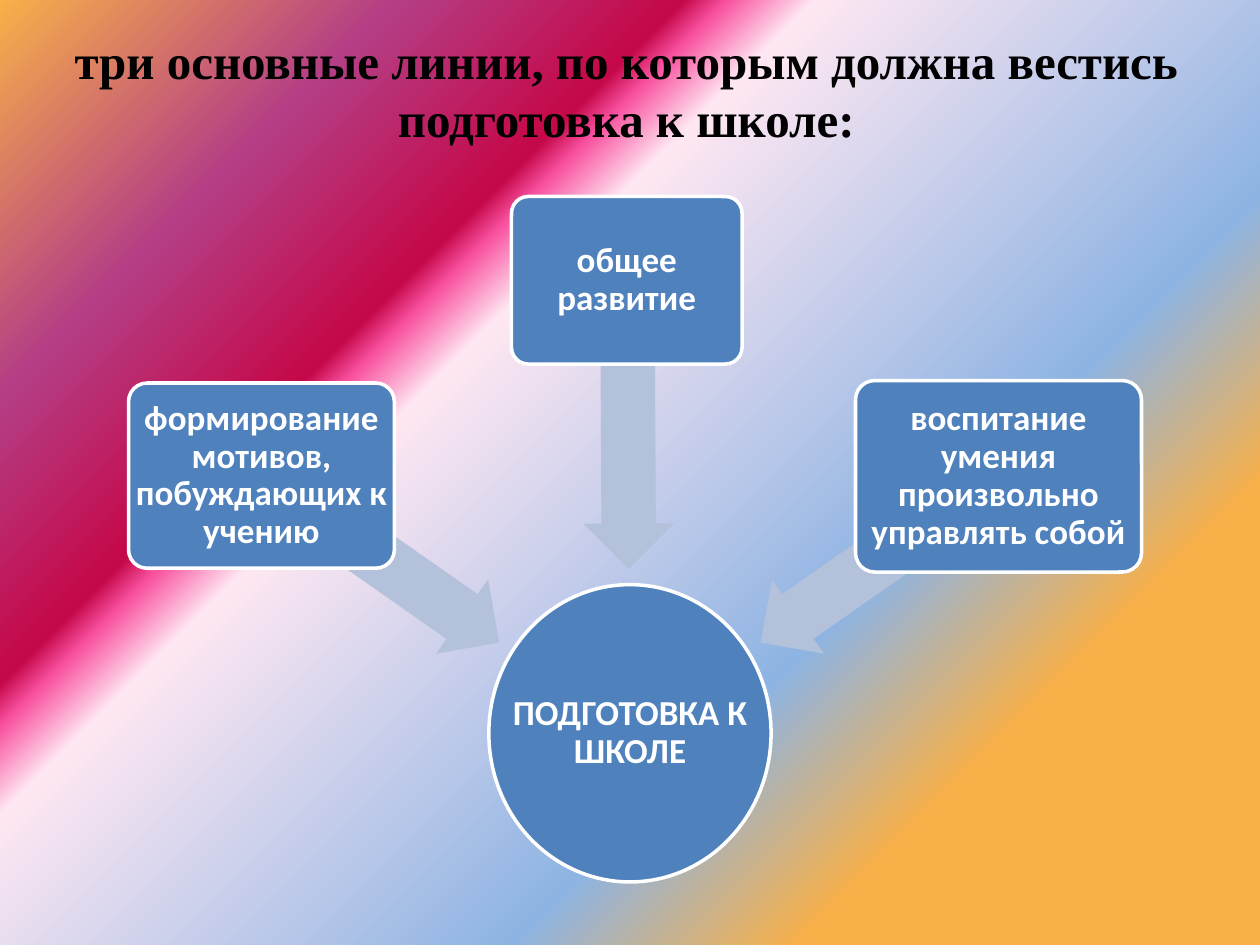
from pptx import Presentation
from pptx import util as u
from pptx.dml.color import RGBColor
from pptx.enum import shapes, text
from pptx.oxml import parse_xml
from pptx.oxml.ns import nsdecls

BLUE, PALE, WHITE, BLACK = "4F81BD", "B3C1DB", "FFFFFF", "000000"
STOPS = [(13, "F8B049"), (21, "F8B049"), (34, "8EB4E3"), (63, "FEE7F2"),
         (67, "F952A0"), (69, "C50849"), (82, "B43E85"), (100, "F8B049")]
KIND = shapes.MSO_SHAPE


def rgb(color):
    return RGBColor.from_string(color)


def inches(box):
    return [u.Inches(v) for v in box]


def set_background(s):
    """Gradient that spreads from the bottom right corner."""
    stops = "".join(f'<a:gs pos="{pos * 1000}"><a:srgbClr val="{color}"/></a:gs>'
                    for pos, color in STOPS)
    s.element.cSld.insert(0, parse_xml(
        f'<p:bg {nsdecls("p", "a")}><p:bgPr><a:gradFill><a:gsLst>{stops}</a:gsLst>'
        '<a:path path="circle"><a:fillToRect l="100000" t="100000"/></a:path>'
        '<a:tileRect r="-100000" b="-100000"/></a:gradFill>'
        '<a:effectLst/></p:bgPr></p:bg>'))


def write(sp, words, size, font, color, inset, spacing=1.0):
    tf = sp.text_frame
    tf.word_wrap = True
    tf.vertical_anchor = text.MSO_ANCHOR.MIDDLE
    tf.margin_left = tf.margin_right = u.Inches(inset)
    tf.margin_top = tf.margin_bottom = u.Inches(inset)
    p = tf.paragraphs[0]
    p.alignment = text.PP_ALIGN.CENTER
    p.line_spacing = spacing
    r = p.add_run()
    r.text = words
    r.font.size, r.font.name, r.font.bold = u.Pt(size), font, True
    r.font.color.rgb = rgb(color)


def add_shape(s, kind, box, fill, outlined=True):
    sp = s.shapes.add_shape(kind, *inches(box))
    sp.shadow.inherit = False
    sp.fill.solid()
    sp.fill.fore_color.rgb = rgb(fill)
    if outlined:
        sp.line.color.rgb = rgb(WHITE)
        sp.line.width = u.Pt(2)
    else:
        sp.line.fill.background()
    return sp


def add_title(s, box, words):
    write(s.shapes.add_textbox(*inches(box)), words, 28, "Times New Roman", BLACK, 0.1)


def add_goal(s, box, words):
    """Circle whose label may use the full width of the box."""
    add_shape(s, KIND.OVAL, box, BLUE)
    write(s.shapes.add_textbox(*inches(box)), words, 20, "Calibri", WHITE, 0.01, 0.9)


def add_line_of_work(s, box, words, arrow_box, angle):
    """Rounded box on top of the arrow that leads from it to the goal."""
    arrow = add_shape(s, KIND.LEFT_ARROW, arrow_box, PALE, outlined=False)
    arrow.adjustments[0], arrow.adjustments[1] = 0.6, 0.5
    arrow.rotation = angle
    card = add_shape(s, KIND.ROUNDED_RECTANGLE, box, BLUE)
    card.adjustments[0] = 0.1
    write(card, words, 20, "Calibri", WHITE, 0, 0.9)


def main():
    prs = Presentation()
    prs.slide_width, prs.slide_height = u.Inches(10), u.Inches(7.5)
    s = prs.slides.add_slide(prs.slide_layouts[6])
    set_background(s)
    add_title(s, (0.47, 0, 9, 1.41),
              "три основные линии, по которым должна вестись подготовка к школе:")
    add_goal(s, (3.88, 4.64, 2.24, 2.36), "ПОДГОТОВКА К ШКОЛЕ")
    for box, words, arrow_box, angle in [
        ((1.02, 3.04, 2.11, 1.47), "формирование мотивов, побуждающих к учению",
         (1.87, 4.08, 2.3, 0.72), 215),
        ((4.06, 1.56, 1.83, 1.33), "общее развитие",
         (3.84, 3.01, 2.29, 0.72), 269.7),
        ((6.79, 3.02, 2.27, 1.52), "воспитание умения произвольно управлять собой",
         (5.83, 4.08, 2.3, 0.72), 325),
    ]:
        add_line_of_work(s, box, words, arrow_box, angle)
    prs.save("out.pptx")


if __name__ == "__main__":
    main()
